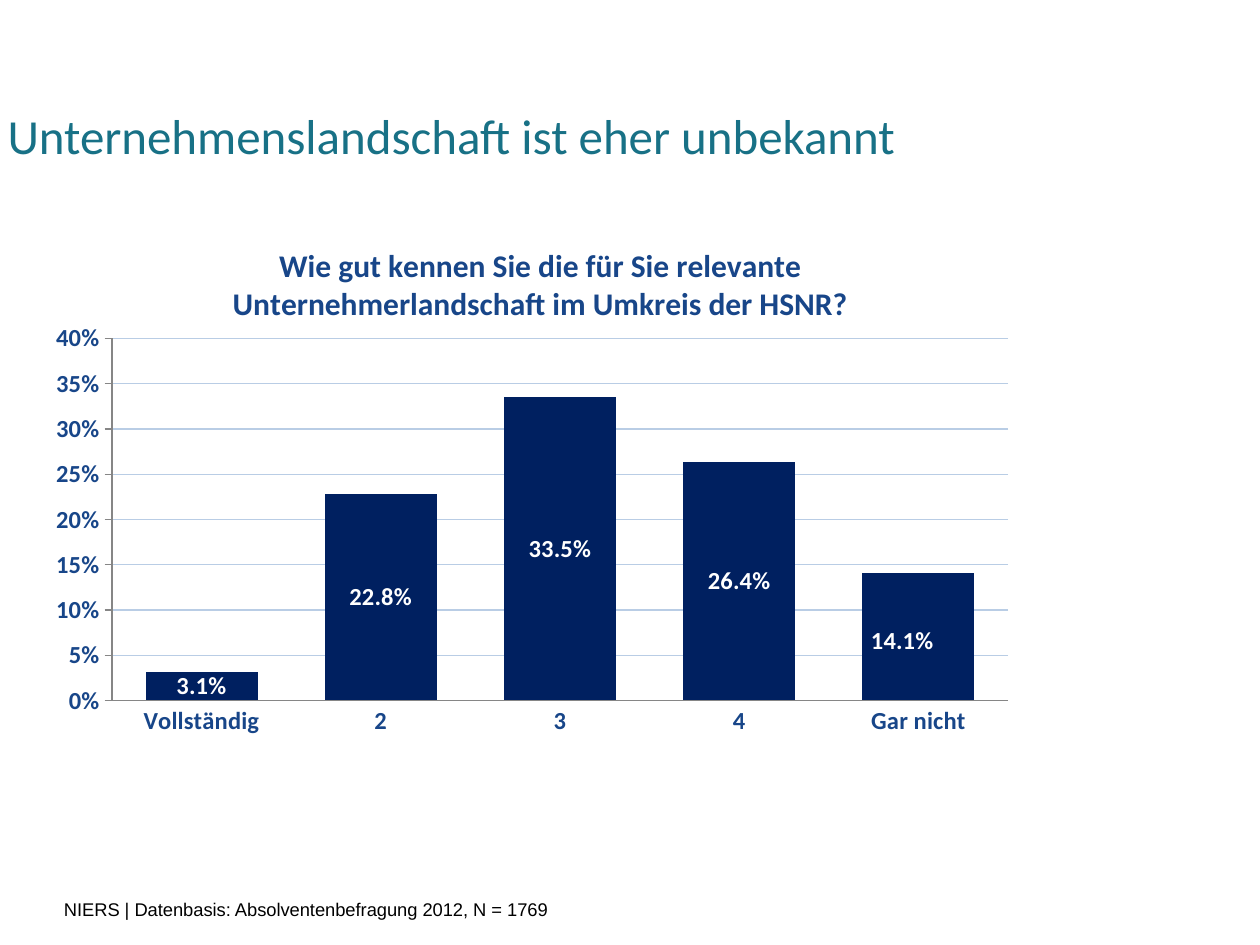
from dataclasses import dataclass

from lxml.etree import _Element as Node
from pptx import Presentation
from pptx.chart.data import CategoryChartData as Data
from pptx.dml.color import RGBColor as Rgb
from pptx.enum.chart import XL_CHART_TYPE as Kind, XL_LABEL_POSITION as Spot
from pptx.enum.chart import XL_TICK_MARK as Tick
from pptx.enum.text import MSO_ANCHOR as Anchor, PP_ALIGN as Align
from pptx.oxml import parse_xml
from pptx.oxml.ns import nsdecls
from pptx.text.text import Font
from pptx.util import Inches, Pt

COLORS = {
    "title": "187186",
    "text": "000000",
    "label": "184689",
    "bar": "002060",
    "value": "FFFFFF",
    "grid": "B9CDE5",
    "axis": "868686",
}
SHARES = {
    "Vollständig": 0.031,
    "2": 0.228,
    "3": 0.335,
    "4": 0.264,
    "Gar nicht": 0.141,
}


@dataclass
class Note:
    text: str
    box: tuple[float, float, float, float]
    size: float
    face: str
    color: str


TITLE = Note("Unternehmenslandschaft ist eher unbekannt",
             (-0.04, 0.79, 9.17, 1.25), 28, "Calibri", "title")
SOURCE = Note("NIERS | Datenbasis: Absolventenbefragung 2012, N = 1769",
              (0.41, 7.08, 6.54, 0.45), 10.5, "Arial", "text")


def style(font: Font, size: float, color: str, bold: bool = False,
          face: str = "Calibri") -> None:
    font.name, font.size, font.bold = face, Pt(size), bold
    font.color.rgb = Rgb.from_string(COLORS[color])


def write(shape, note: Note) -> None:
    shape.left, shape.top, shape.width, shape.height = map(Inches, note.box)
    frame = shape.text_frame
    frame.word_wrap = True
    frame.vertical_anchor = Anchor.TOP
    frame.text = note.text
    par = frame.paragraphs[0]
    par.alignment = Align.LEFT
    style(par.font, note.size, note.color, face=note.face)


def layout(**parts: object) -> Node:
    """Build a manual chart layout from its parts, in schema order."""
    tags = "".join(f'<c:{key} val="{val}"/>' for key, val in parts.items())
    return parse_xml(f'<c:layout {nsdecls("c")}><c:manualLayout>{tags}'
                     '</c:manualLayout></c:layout>')


prs = Presentation()
prs.slide_width, prs.slide_height = Inches(10), Inches(7.5)
slide = prs.slides.add_slide(prs.slide_layouts[5])
write(slide.shapes.title, TITLE)

# Chart
data = Data(number_format="0.0%")
data.categories = list(SHARES)
data.add_series("Series 1", list(SHARES.values()))
chart = slide.shapes.add_chart(
    Kind.COLUMN_STACKED, *map(Inches, (0.28, 1.7, 8.01, 4.59)), data).chart
style(chart.font, 10, "text")
chart.has_legend = False

# Chart title
head = chart.chart_title.text_frame
head.text = ("Wie gut kennen Sie die für Sie relevante "
             "Unternehmerlandschaft im Umkreis der HSNR?")
style(head.paragraphs[0].font, 18, "label", True)
title = chart.chart_title._element
for old in title.findall("{*}layout"):
    title.remove(old)
title.find("{*}tx").addnext(
    layout(xMode="edge", yMode="edge", x=0.19, y=0.04))

# Plot area
area = chart._chartSpace.chart.plotArea
for old in area.findall("{*}layout"):
    area.remove(old)
area.insert(0, layout(layoutTarget="inner", xMode="edge", yMode="edge",
                      x=0.076, y=0.215, w=0.888, h=0.626))

# Axes
cats, vals = chart.category_axis, chart.value_axis
for axis, tick in ((cats, Tick.NONE), (vals, Tick.OUTSIDE)):
    axis.major_tick_mark, axis.minor_tick_mark = tick, Tick.NONE
    axis.format.line.color.rgb = Rgb.from_string(COLORS["axis"])
    axis.format.line.width = Pt(0.75)
    style(axis.tick_labels.font, 14, "label", True)
vals.minimum_scale, vals.maximum_scale, vals.major_unit = 0, 0.4, 0.05
vals.tick_labels.number_format = "0%"
vals.tick_labels.number_format_is_linked = False
vals.has_major_gridlines = True
grid = vals.major_gridlines.format.line
grid.color.rgb = Rgb.from_string(COLORS["grid"])
grid.width = Pt(0.75)

# Bars and their values
plot = chart.plots[0]
plot.gap_width, plot.overlap, plot.vary_by_categories = 60, 100, False
bars = plot.series[0]
bars.format.fill.solid()
bars.format.fill.fore_color.rgb = Rgb.from_string(COLORS["bar"])
tags = bars.data_labels
tags.show_value = True
tags.number_format, tags.number_format_is_linked = "0.0%", False
tags.position = Spot.CENTER
style(tags.font, 14, "value", True)

# The last value sits a little left of its bar's centre
last = bars.points[len(SHARES) - 1].data_label
style(last.font, 14, "value", True)
last.position = Spot.CENTER
mark = tags._element.find("{*}dLbl/{*}idx")
mark.addnext(parse_xml(f'<c:numFmt {nsdecls("c")} formatCode="0.0%" '
                       'sourceLinked="0"/>'))
mark.addnext(layout(x=-0.016, y=0.007))

# Source line
write(slide.shapes.add_textbox(0, 0, 0, 0), SOURCE)

prs.save("out.pptx")
